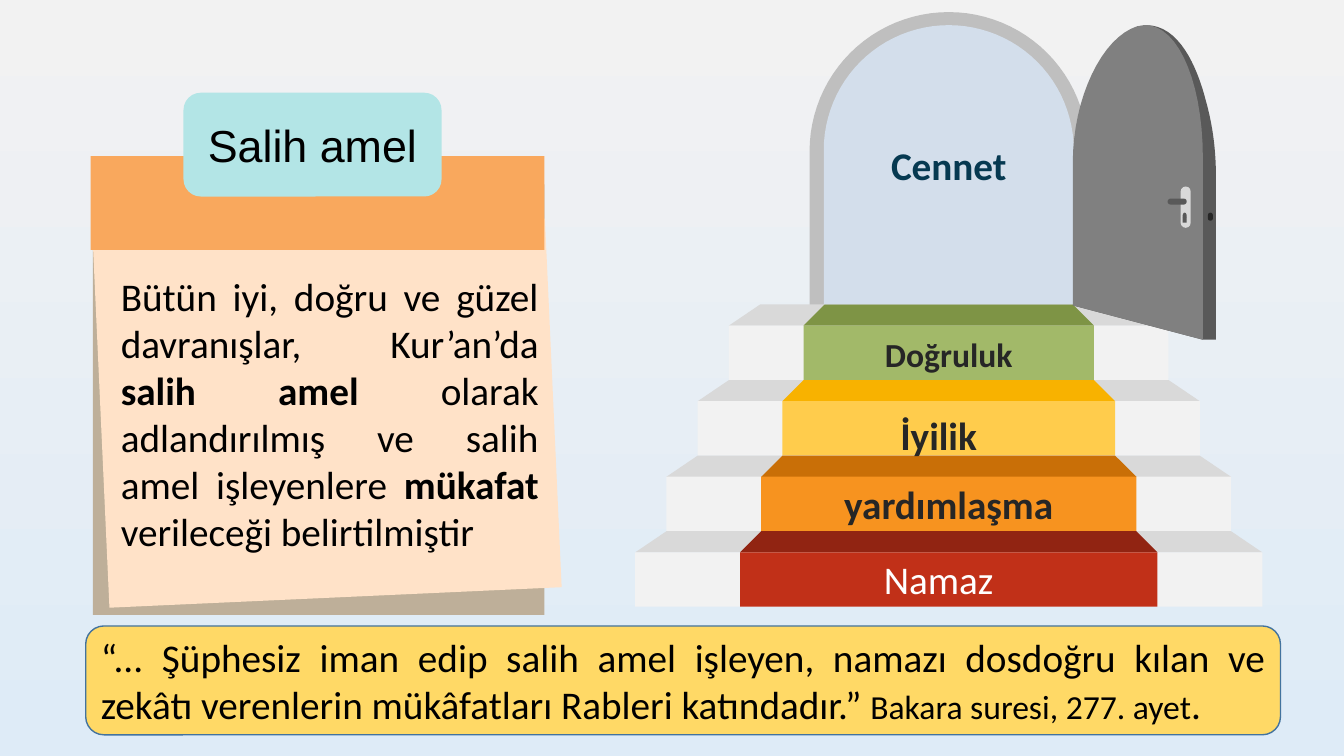
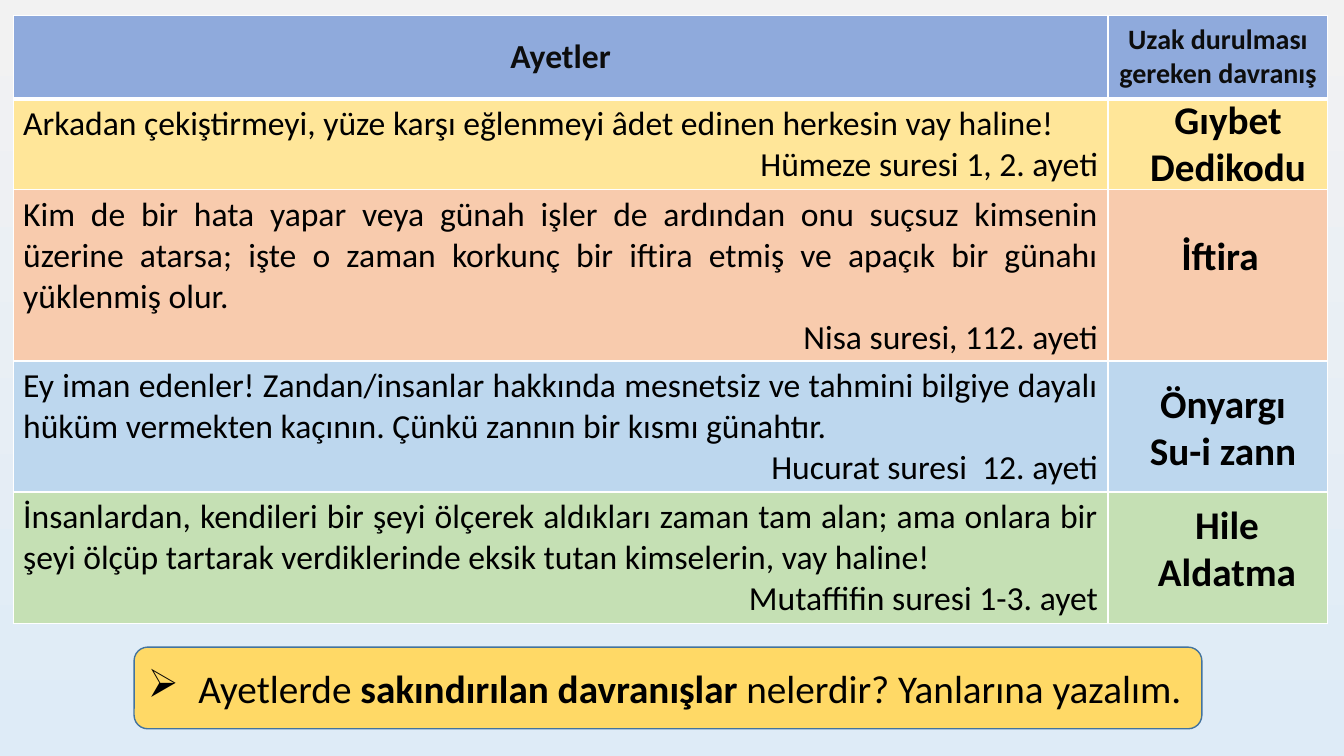
from math import cos, pi, sin

from lxml.etree import SubElement
from pptx import Presentation
from pptx.dml.color import RGBColor
from pptx.enum.shapes import MSO_SHAPE
from pptx.enum.text import MSO_ANCHOR, MSO_AUTO_SIZE, PP_ALIGN
from pptx.oxml.ns import qn
from pptx.util import Inches, Pt

CENTER, RIGHT, JUSTIFY = PP_ALIGN.CENTER, PP_ALIGN.RIGHT, PP_ALIGN.JUSTIFY
BLACK, DARK, WHITE = "000000", "262626", "FFFFFF"
GOLD, BLUE_LINE = "FFD966", "43739E"
LIGHT_GREY, STEEL, IRON = "D9D9D9", "595959", "808080"
TITLE_ONLY, BLANK = 5, 6


def rgb(value):
    return RGBColor.from_string(value)


def box_of(*lengths):
    return [Inches(n) for n in lengths]


def bezier(p0, p1, p2, p3, steps=16):
    """Points of a cubic curve after its start."""
    points = []
    for k in range(1, steps + 1):
        t = k / steps
        weights = ((1 - t) ** 3, 3 * t * (1 - t) ** 2, 3 * t * t * (1 - t), t ** 3)
        points.append(tuple(sum(w * p[axis] for w, p in zip(weights, (p0, p1, p2, p3)))
                            for axis in (0, 1)))
    return points


def arch(center, top, radius, bottom, steps=48):
    """Half circle standing on straight sides."""
    dome = [(center - radius * cos(pi * k / steps),
             top + radius - radius * sin(pi * k / steps)) for k in range(steps + 1)]
    return [(center - radius, bottom), *dome, (center + radius, bottom)]


def trapezoid(center, top, bottom, half_top, half_bottom):
    return [(center - half_top, top), (center + half_top, top),
            (center + half_bottom, bottom), (center - half_bottom, bottom)]


class Deck:
    font = "Calibri"

    def __init__(self, prs):
        self.prs = prs
        self.s = None
        fill = prs.slide_master.background.fill
        fill.gradient()
        fill.gradient_angle = 270
        for stop, color in zip(fill.gradient_stops, ("F2F2F2", "DEEBF7")):
            stop.color.rgb = rgb(color)

    def slide(self, layout):
        self.s = self.prs.slides.add_slide(self.prs.slide_layouts[layout])

    def add_runs(self, tf, paragraphs, size=28, color=BLACK, bold=False,
                 align=CENTER, font=None):
        """A paragraph is a list of runs; a run is a text or (text, size, bold)."""
        tf.word_wrap = True
        for i, runs in enumerate(paragraphs):
            p = tf.paragraphs[0] if i == 0 else tf.add_paragraph()
            p.alignment = align[i] if isinstance(align, tuple) else align
            for run in runs:
                text, run_size, run_bold = (
                    (run, size, bold) if isinstance(run, str) else run)
                r = p.add_run()
                r.text = text
                r.font.name = font or self.font
                r.font.size = Pt(run_size)
                r.font.bold = run_bold
                r.font.color.rgb = rgb(color)

    def paint(self, sp, fill, line=None):
        sp.shadow.inherit = False
        sp.fill.solid()
        sp.fill.fore_color.rgb = rgb(fill)
        if line:
            sp.line.color.rgb = rgb(line)
            sp.line.width = Pt(1)
        else:
            sp.line.fill.background()
        return sp

    def shape(self, box, fill, kind=MSO_SHAPE.RECTANGLE, line=None, rotation=0):
        sp = self.s.shapes.add_shape(kind, *box_of(*box))
        sp.rotation = rotation
        return self.paint(sp, fill, line)

    def pill(self, box, fill):
        sp = self.shape(box, fill, MSO_SHAPE.ROUNDED_RECTANGLE)
        sp.adjustments[0] = 0.5

    def outline(self, points, fill):
        points = [box_of(*point) for point in points]
        builder = self.s.shapes.build_freeform(*points[0])
        builder.add_line_segments(points[1:], close=True)
        return self.paint(builder.convert_to_shape(), fill)

    def text(self, box, paragraphs, **style):
        sp = self.s.shapes.add_textbox(*box_of(*box))
        self.add_runs(sp.text_frame, paragraphs, **style)

    def title(self, box, text, fill):
        self.shape(box, fill, MSO_SHAPE.ROUNDED_RECTANGLE)
        sp = self.s.shapes.title
        sp.left, sp.top, sp.width, sp.height = box_of(*box)
        tf = sp.text_frame
        tf.auto_size = MSO_AUTO_SIZE.NONE
        tf.vertical_anchor = MSO_ANCHOR.MIDDLE
        self.add_runs(tf, [[text]], size=32, font="Arial")
        # Bring the title in front of its plate
        sp.element.getparent().append(sp.element)

    def callout(self, box, runs, bullet=None):
        sp = self.shape(box, GOLD, MSO_SHAPE.ROUNDED_RECTANGLE, BLUE_LINE)
        tf = sp.text_frame
        tf.vertical_anchor = MSO_ANCHOR.MIDDLE
        self.add_runs(tf, [runs], align=JUSTIFY)
        if bullet:
            props = tf.paragraphs[0]._p.get_or_add_pPr()
            props.set("marL", str(Inches(0.5)))
            props.set("indent", str(-Inches(0.5)))
            SubElement(props, qn("a:buChar")).set("char", bullet)

    def cell(self, cell, fill, bottom=1):
        """Fill a cell and give it white borders."""
        cell.fill.solid()
        cell.fill.fore_color.rgb = rgb(fill)
        props = cell._tc.get_or_add_tcPr()
        for i, (side, width) in enumerate(
                (("lnL", 1), ("lnR", 1), ("lnT", 1), ("lnB", bottom))):
            ln = SubElement(props, qn("a:" + side), w=str(Pt(width)))
            solid = SubElement(ln, qn("a:solidFill"))
            SubElement(solid, qn("a:srgbClr"), val=WHITE)
            props.insert(i, ln)


def good_deeds(deck):
    deck.slide(TITLE_ONLY)

    # Note sheet with its heading
    deck.shape((0.92, 1.83, 4.48, 4.27), "BEAF99")
    deck.shape((1, 2.27, 4.49, 3.66), "FFE2C8", rotation=357.4)
    deck.shape((0.9, 1.55, 4.5, 0.93), "F9A85D")
    deck.title((1.82, 0.92, 2.56, 1.03), "Salih amel", "B3E5E6")
    deck.text((1.1, 2.65, 4.34, 2.93), [[
        "Bütün iyi, doğru ve güzel davranışlar, Kur’an’da ",
        ("salih amel ", 28, True),
        "olarak adlandırılmış ve salih amel işleyenlere ",
        ("mükafat", 28, True),
        " verileceği belirtilmiştir"]], align=JUSTIFY)

    # Door frame
    center = 9.41
    deck.outline(arch(center, 0.12, 1.38, 3.17), "BFBFBF")

    # Stairs, from the top step down
    tread, riser, pitch = 0.21, 0.54, 0.75
    carpets = [("7E9445", "A2B969"), ("F8B200", "FFCC4C"),
               ("C96F07", "F7931F"), ("912412", "C13018")]
    for i, (tread_color, riser_color) in enumerate(carpets):
        y = 3.23 + pitch * i
        for half, slant, top_color, front_color in (
                (2.18 + 0.31 * i, 0.31, LIGHT_GREY, "F2F2F2"),
                (1.44 + 0.21 * i, 0.21, tread_color, riser_color)):
            deck.outline(trapezoid(center, y - tread, y, half - slant, half), top_color)
            deck.shape((center - half, y, 2 * half, riser), front_color)

    # Doorway
    doorway = deck.outline(arch(center, 0.25, 1.24, 3.02), "D3DEEB")
    doorway.text_frame.vertical_anchor = MSO_ANCHOR.MIDDLE
    deck.add_runs(doorway.text_frame, [["Cennet"]], color="063951", bold=True)

    # Open door: edge, then face
    hinge, corner = (10.64, 3.03), (11.93, 3.37)
    deck.outline([hinge, corner, (12.06, 3.37), (12.06, 1.76),
                  *bezier((12.06, 1.76), (12.06, 1.5), (12.03, 1.25), (11.96, 1)),
                  *bezier((11.96, 1), (11.87, 0.65), (11.69, 0.25), (11.37, 0.25))],
                 STEEL)
    deck.outline([(11.28, 0.26),
                  *bezier((11.28, 0.26), (10.93, 0.37), (10.64, 0.97), (10.64, 1.62)),
                  hinge, corner, (11.93, 1.57),
                  *bezier((11.93, 1.57), (11.93, 0.75), (11.64, 0.16), (11.28, 0.26))],
                 IRON)

    # Handle, keyhole and latch
    deck.pill((11.71, 1.85, 0.1, 0.41), LIGHT_GREY)
    deck.pill((11.58, 1.97, 0.19, 0.06), STEEL)
    deck.shape((11.73, 2.11, 0.04, 0.06), STEEL, MSO_SHAPE.OVAL)
    deck.shape((11.73, 2.15, 0.04, 0.06), STEEL)
    deck.pill((11.98, 2.11, 0.05, 0.08), DARK)

    # Step names
    for text, middle, top, size, color, bold in (
            ("Doğruluk", 9.41, 3.26, 24, DARK, True),
            ("İyilik", 9.31, 4.03, 28, DARK, True),
            ("yardımlaşma", 9.41, 4.72, 28, DARK, True),
            ("Namaz", 9.31, 5.46, 28, WHITE, False)):
        deck.text((middle - 1.3, top, 2.6, 0.57), [[text]],
                  size=size, color=color, bold=bold)

    deck.callout((0.85, 6.21, 11.85, 1.08), [
        "“... Şüphesiz iman edip salih amel işleyen, namazı dosdoğru kılan ve "
        "zekâtı verenlerin mükâfatları Rableri katındadır.” ",
        ("Bakara suresi, 277. ayet", 24, False), "."])


def verses(deck):
    deck.slide(BLANK)
    rows = [
        ("FFE699", 0.88, "Arkadan çekiştirmeyi, yüze karşı eğlenmeyi âdet edinen "
         "herkesin vay haline! ", "Hümeze suresi 1, 2. ayeti"),
        ("F8CBAD", 1.66, "Kim de bir hata yapar veya günah işler de ardından onu "
         "suçsuz kimsenin üzerine atarsa; işte o zaman korkunç bir iftira etmiş ve "
         "apaçık bir günahı yüklenmiş olur.", "Nisa suresi, 112. ayeti"),
        ("BDD7EE", 1.27, "Ey iman edenler! Zandan/insanlar hakkında mesnetsiz ve "
         "tahmini bilgiye dayalı hüküm vermekten kaçının. Çünkü zannın bir kısmı "
         "günahtır.", "Hucurat suresi  12. ayeti"),
        ("C5E0B4", 1.27, "İnsanlardan, kendileri bir şeyi ölçerek aldıkları zaman "
         "tam alan; ama onlara bir şeyi ölçüp tartarak verdiklerinde eksik tutan "
         "kimselerin, vay haline!", "Mutaffifin suresi 1-3. ayet"),
    ]

    # Table of verses
    table = deck.s.shapes.add_table(
        len(rows) + 1, 2, *box_of(0.13, 0.15, 13.04, 5.91)).table
    table.horz_banding = False
    for column, width in zip(table.columns, (10.86, 2.18)):
        column.width = Inches(width)
    table.rows[0].height = Inches(0.83)
    for cell, text, size in zip(table.rows[0].cells,
                                ("Ayetler", "Uzak durulması gereken davranış"),
                                (24, 20)):
        deck.cell(cell, "8FAADC", bottom=3)
        cell.vertical_anchor = MSO_ANCHOR.MIDDLE
        deck.add_runs(cell.text_frame, [[text]], size=size, color="0D0D0D", bold=True)
    for i, (fill, height, verse, source) in enumerate(rows, 1):
        table.rows[i].height = Inches(height)
        for cell in table.rows[i].cells:
            deck.cell(cell, fill)
        deck.add_runs(table.cell(i, 0).text_frame, [[verse], [source]],
                      size=24, align=(JUSTIFY, RIGHT))

    deck.callout((1.33, 6.42, 10.59, 0.81), [
        "Ayetlerde ", ("sakındırılan davranışlar ", 28, True),
        "nelerdir? Yanlarına yazalım."], bullet="➢")

    # Answers over the right column
    for left, top, width, lines in (
            (11.28, 0.9, 1.8, ("Gıybet", "Dedikodu")),
            (11.2, 2.25, 1.8, ("İftira",)),
            (11.23, 3.71, 1.8, ("Önyargı", "Su-i zann")),
            (11.2, 4.91, 1.94, ("Hile", "Aldatma"))):
        deck.text((left, top, width, 0.1 + 0.47 * len(lines)),
                  [[line] for line in lines], bold=True)


def main():
    prs = Presentation()
    prs.slide_width, prs.slide_height = box_of(13.33, 7.5)
    deck = Deck(prs)
    good_deeds(deck)
    verses(deck)
    prs.save("out.pptx")


if __name__ == "__main__":
    main()
